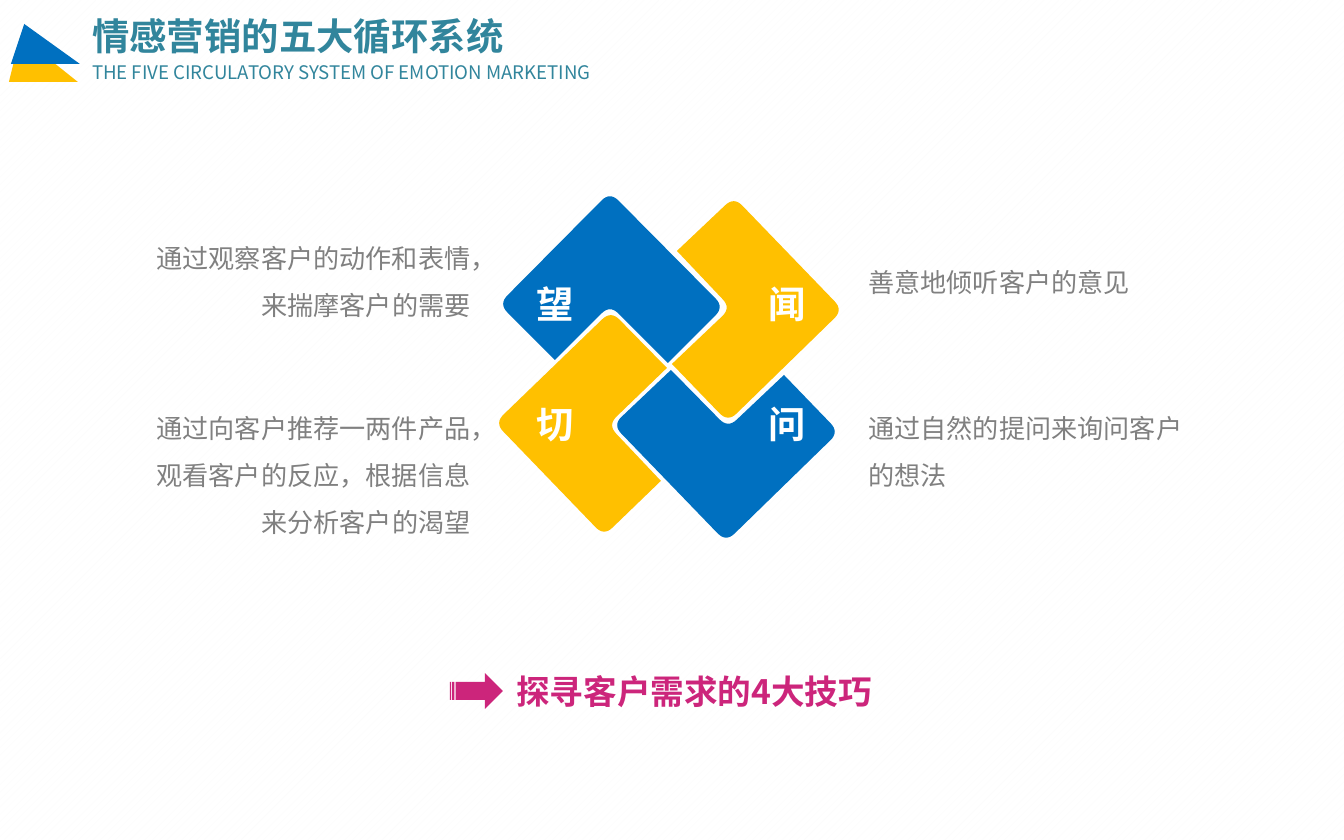
"""Build a slide on the four skills for finding out what customers need."""
from math import dist

from lxml import etree
from pptx import Presentation
from pptx import util as u
from pptx.dml.color import RGBColor
from pptx.enum import dml, shapes, text
from pptx.oxml.ns import qn

SCALE = u.Inches(10) / 1344
FONT = "Noto Sans CJK SC"
COLORS = {
    "teal": "31859C", "magenta": "CC257B", "blue": "0070C0", "yellow": "FFC000",
    "gray": "808080", "white": "FFFFFF", "stripe": "FBFBFB",
}
LEFT, RIGHT = text.PP_ALIGN.LEFT, text.PP_ALIGN.RIGHT
STYLES = {
    "title": dict(size=20, bold=True, color="teal", wrap=False),
    "subtitle": dict(size=10, bold=False, color="teal", wrap=False),
    "conclusion": dict(size=18, bold=True, color="magenta", wrap=True),
    "label": dict(size=20, bold=True, color="white", wrap=False),
    "skill": dict(size=14, bold=False, color="gray", wrap=True, spacing=1.5),
}
HEADINGS = [
    ("情感营销的五大循环系统", "title", (79, 7, 442, 59)),
    ("THE FIVE CIRCULATORY SYSTEM OF EMOTION MARKETING", "subtitle", (79, 54, 567, 36)),
    ("探寻客户需求的4大技巧", "conclusion", (503, 664, 417, 54)),
]
ICONS = [
    (shapes.MSO_SHAPE.STRIPED_RIGHT_ARROW, "magenta", (450, 673, 53, 36), None),
    (shapes.MSO_SHAPE.ISOSCELES_TRIANGLE, "yellow", (9, 36, 69, 46), 0.835),
    (shapes.MSO_SHAPE.ISOSCELES_TRIANGLE, "blue", (11, 24, 69, 40), 0.807),
]
ROUNDING = 12
TILES = [
    {"color": "yellow", "sharp": (1, 3),
     "corners": [(611, 311), (667, 368), (608, 425), (661, 481), (604, 536), (495, 423)]},
    {"color": "blue", "sharp": (2, 4),
     "corners": [(610, 192), (724, 307), (668, 363), (610, 305), (555, 360), (499, 304)]},
    {"color": "yellow", "sharp": (3, 5),
     "corners": [(734, 197), (843, 310), (728, 422), (672, 364), (731, 308), (677, 251)]},
    {"color": "blue", "sharp": (0, 2),
     "corners": [(671, 370), (728, 428), (784, 375), (839, 432), (726, 542), (613, 425)]},
]
LABEL_X, LABEL_Y = (523, 755), (275, 395)
SKILL_X, SKILL_ALIGN = (126, 855), (RIGHT, LEFT)
SKILLS = [
    ("望", 0, 0, "通过观察客户的动作和表情，来揣摩客户的需要", 220, 109),
    ("闻", 1, 0, "善意地倾听客户的意见", 244, 61),
    ("切", 0, 1, "通过向客户推荐一两件产品，观看客户的反应，根据信息来分析客户的渴望", 390, 156),
    ("问", 1, 1, "通过自然的提问来询问客户的想法", 390, 109),
]


def px(*values):
    return [round(value * SCALE) for value in values]


def paint(shape, color):
    shape.fill.solid()
    shape.fill.fore_color.rgb = RGBColor.from_string(COLORS[color])
    shape.line.fill.background()
    shape.shadow.inherit = False


def add_text(page, words, style, place, align=LEFT):
    look = STYLES[style]
    frame = page.shapes.add_textbox(*px(*place)).text_frame
    frame.word_wrap = look["wrap"]
    frame.auto_size = text.MSO_AUTO_SIZE.SHAPE_TO_FIT_TEXT
    para = frame.paragraphs[0]
    para.alignment = align
    para.line_spacing = look.get("spacing", 1.0)
    span = para.add_run()
    span.text = words
    formats = {"name": FONT, "size": u.Pt(look["size"]), "bold": look["bold"]}
    for name, value in formats.items():
        setattr(span.font, name, value)
    span.font.color.rgb = RGBColor.from_string(COLORS[look["color"]])
    etree.SubElement(span.font._element, qn("a:ea")).set("typeface", FONT)


def add_icon(page, kind, color, place, peak):
    icon = page.shapes.add_shape(kind, *px(*place))
    paint(icon, color)
    if peak is not None:
        icon.adjustments[0] = peak
        icon._element.spPr.find(qn("a:xfrm")).set("flipH", "1")


def toward(start, end, length):
    share = length / dist(start, end)
    return tuple(a + (b - a) * share for a, b in zip(start, end))


def rounded(before, corner, after, steps=8):
    first, last = toward(corner, before, ROUNDING), toward(corner, after, ROUNDING)
    for step in range(steps + 1):
        t = step / steps
        yield tuple((1 - t) ** 2 * a + 2 * t * (1 - t) * b + t ** 2 * c
                    for a, b, c in zip(first, corner, last))


def add_tile(page, color, sharp, corners):
    outline = []
    for index, corner in enumerate(corners):
        after = corners[(index + 1) % len(corners)]
        outline += [corner] if index in sharp else rounded(corners[index - 1], corner, after)
    points = [px(*point) for point in outline]
    builder = page.shapes.build_freeform(*points[0])
    builder.add_line_segments(points[1:], close=True)
    paint(builder.convert_to_shape(), color)


def main():
    deck = Presentation()
    deck.slide_width, deck.slide_height = px(1344, 840)
    page = deck.slides.add_slide(deck.slide_layouts[6])
    backdrop = page.background.fill
    backdrop.patterned()
    backdrop.pattern = dml.MSO_PATTERN.WIDE_UPWARD_DIAGONAL
    backdrop.fore_color.rgb = RGBColor.from_string(COLORS["stripe"])
    backdrop.back_color.rgb = RGBColor.from_string(COLORS["white"])
    for heading in HEADINGS:
        add_text(page, *heading)
    for tile in TILES:
        add_tile(page, **tile)
    for label, column, row, words, top, height in SKILLS:
        add_text(page, label, "label", (LABEL_X[column], LABEL_Y[row], 65, 59))
        add_text(page, words, "skill", (SKILL_X[column], top, 358, height), SKILL_ALIGN[column])
    for icon in ICONS:
        add_icon(page, *icon)
    deck.save("out.pptx")


if __name__ == "__main__":
    main()
